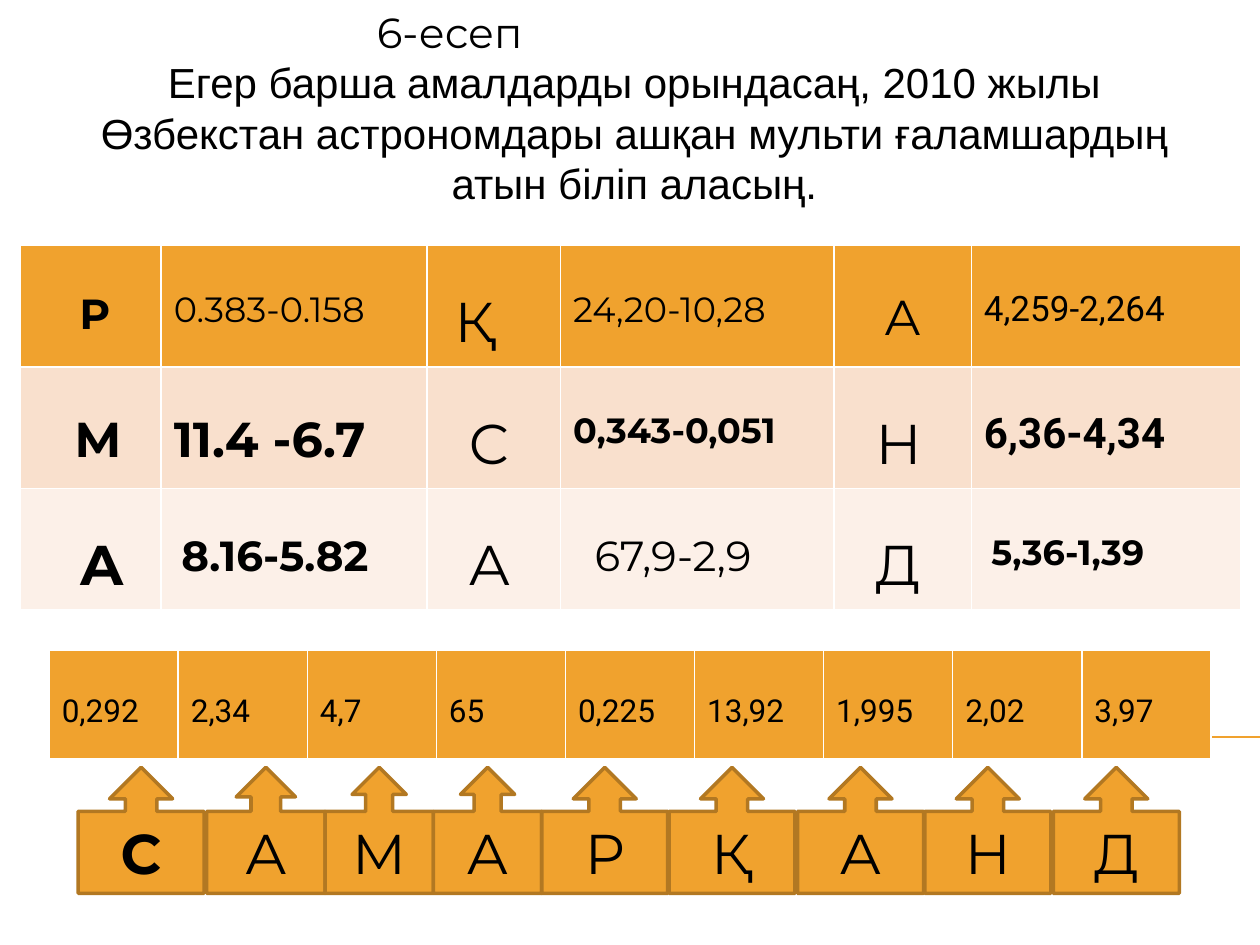
from dataclasses import dataclass
from itertools import accumulate, pairwise

from lxml.etree import SubElement
from pptx import Presentation
from pptx.dml.color import RGBColor
from pptx.enum.shapes import MSO_CONNECTOR, MSO_SHAPE
from pptx.enum.text import MSO_ANCHOR, PP_ALIGN
from pptx.oxml.ns import qn
from pptx.util import Inches, Pt


@dataclass(frozen=True)
class Theme:
    """Colours, fonts and type sizes of the slide."""
    ink: str = "000000"
    white: str = "FFFFFF"
    orange: str = "F0A22E"
    outline: str = "B27822"
    peach: str = "F9E0CD"
    cream: str = "FCF0E8"
    display: str = "Montserrat"
    body: str = "Roboto"
    heading: str = "Arial"
    small: int = 18
    medium: int = 20
    large: int = 24
    bigger: int = 28
    letter: int = 32


THEME = Theme()


@dataclass(frozen=True)
class Entry:
    """Text of one table cell with its type and left inset."""
    text: str
    size: int
    bold: bool = False
    inset: float = 0.1
    font: str = THEME.display


TASK_COLUMNS = (1.12, 2.11, 1.06, 2.17, 1.09, 2.14)
TASK_FILLS = (THEME.orange, THEME.peach, THEME.cream)
TASKS = (
    (Entry("Р", THEME.large, True, 0.47),
     Entry("0.383-0.158", THEME.medium),
     Entry("Қ", THEME.letter, inset=0.22),
     Entry("24,20-10,28", THEME.medium),
     Entry("А", THEME.bigger, inset=0.4),
     Entry("4,259-2,264", THEME.medium, font=THEME.body)),
    (Entry("М", THEME.bigger, True, 0.43),
     Entry("11.4 -6.7", THEME.bigger, True),
     Entry("С", THEME.letter, inset=0.33),
     Entry("0,343-0,051", THEME.medium, True),
     Entry("Н", THEME.letter, inset=0.33),
     Entry("6,36-4,34", THEME.large, True, font=THEME.body)),
    (Entry("А", THEME.letter, True, 0.47),
     Entry("8.16-5.82", THEME.large, True, 0.16),
     Entry("А", THEME.letter, inset=0.33),
     Entry("67,9-2,9", THEME.large, inset=0.27),
     Entry("Д", THEME.letter, inset=0.33),
     Entry("5,36-1,39", THEME.medium, True, 0.16)),
)
ANSWERS = ("0,292", "2,34", "4,7", "65", "0,225", "13,92", "1,995", "2,02", "3,97")
WORD = "САМАРҚАНД"
LETTER_STEPS = (1.02, 0.94, 0.86, 0.86, 1.01, 1.02, 1.01, 1.02, 1)


def color(value):
    """Turn a hex value into a colour."""
    return RGBColor.from_string(value)


def add_span(para, text, size, font, bold=False):
    """Add one formatted run to a paragraph."""
    span = para.add_run()
    span.text = text
    span.font.size = Pt(size)
    span.font.name = font
    span.font.bold = bold
    span.font.color.rgb = color(THEME.ink)


def set_indent(para, left):
    """Set the left margin of a paragraph, with no first-line offset."""
    properties = para._p.get_or_add_pPr()
    properties.set("marL", str(Inches(left)))
    properties.set("indent", "0")


def add_heading(page, left, top, width, height):
    """Place the task number and the question in the title."""
    title = page.shapes.title
    title.left, title.top = Inches(left), Inches(top)
    title.width, title.height = Inches(width), Inches(height)
    frame = title.text_frame
    frame.word_wrap = True
    frame.vertical_anchor = MSO_ANCHOR.TOP
    number = frame.paragraphs[0]
    number.alignment = PP_ALIGN.LEFT
    set_indent(number, 2.27)
    add_span(number, "6-есеп", THEME.large, THEME.display)
    question = frame.add_paragraph()
    question.alignment = PP_ALIGN.CENTER
    set_indent(question, 0)
    add_span(question, "Егер барша амалдарды орындасаң, 2010 жылы Өзбекстан "
             "астрономдары ашқан мульти ғаламшардың атын біліп аласың.",
             THEME.large, THEME.heading)


def add_rule(page, left, top, width):
    """Draw the thin horizontal line that runs to the slide edge."""
    rule = page.shapes.add_connector(
        MSO_CONNECTOR.STRAIGHT, Inches(left), Inches(top), Inches(left + width), Inches(top))
    rule.line.color.rgb = color(THEME.orange)
    rule.line.width = Pt(0.75)
    SubElement(rule._element.spPr, qn("a:effectLst"))


def format_cell(cell, entry, fill):
    """Fill, border and write one table cell."""
    properties = cell._tc.get_or_add_tcPr()
    for side in "LRTB":
        border = SubElement(properties, qn(f"a:ln{side}"), w=str(Pt(1)))
        paint = SubElement(border, qn("a:solidFill"))
        SubElement(paint, qn("a:srgbClr"), val=THEME.white)
    cell.fill.solid()
    cell.fill.fore_color.rgb = color(fill)
    cell.margin_left = Inches(entry.inset)
    cell.margin_top = Inches(0.34)
    add_span(cell.text_frame.paragraphs[0], entry.text, entry.size, entry.font, entry.bold)


def add_grid(page, left, top, columns, height, rows, fills):
    """Build a table with equal rows, one fill to each row."""
    table = page.shapes.add_table(
        len(rows), len(columns), Inches(left), Inches(top),
        Inches(sum(columns)), Inches(height)).table
    table.horz_banding = False
    for column, width in zip(table.columns, columns):
        column.width = Inches(width)
    for row, entries, fill in zip(table.rows, rows, fills):
        row.height = Inches(height / len(rows))
        for cell, entry in zip(row.cells, entries):
            format_cell(cell, entry, fill)


def add_word(page, left, top, height):
    """Place a row of arrow callouts that spell the answer."""
    edges = accumulate(LETTER_STEPS, initial=left)
    for index, (letter, (start, end)) in enumerate(zip(WORD, pairwise(edges))):
        callout = page.shapes.add_shape(
            MSO_SHAPE.UP_ARROW_CALLOUT, Inches(start), Inches(top),
            Inches(min(1, end - start)), Inches(height))
        callout.shadow.inherit = False
        callout.fill.solid()
        callout.fill.fore_color.rgb = color(THEME.orange)
        callout.line.color.rgb = color(THEME.outline)
        callout.line.width = Pt(2)
        callout.text_frame.vertical_anchor = MSO_ANCHOR.MIDDLE
        para = callout.text_frame.paragraphs[0]
        para.alignment = PP_ALIGN.CENTER
        add_span(para, letter, THEME.letter, THEME.display, index == 0)


def main():
    """Build and save the deck."""
    deck = Presentation()
    deck.slide_width, deck.slide_height = Inches(10), Inches(7.5)
    page = deck.slides.add_slide(deck.slide_layouts[5])
    add_heading(page, 0.62, 0, 8.83, 1.72)
    add_rule(page, 0.56, 5.85, 9.44)
    add_grid(page, 0.16, 1.95, TASK_COLUMNS, 2.89, TASKS, TASK_FILLS)
    answers = [Entry(text, THEME.small, font=THEME.body) for text in ANSWERS]
    add_grid(page, 0.39, 5.16, [9.22 / len(answers)] * len(answers), 0.86,
             [answers], [THEME.orange])
    add_word(page, 0.62, 6.09, 1)
    deck.save("out.pptx")


if __name__ == "__main__":
    main()
